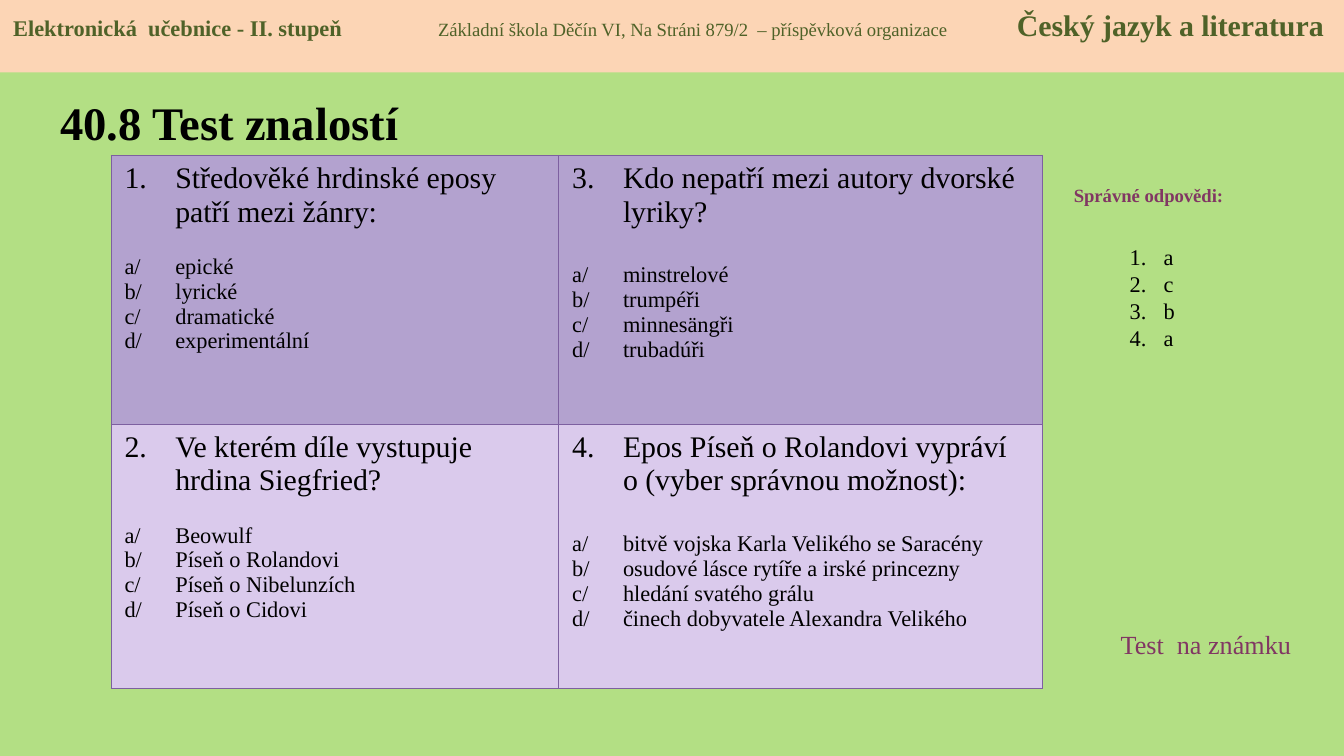
from lxml.etree import SubElement
from pptx import Presentation
from pptx.dml.color import RGBColor
from pptx.enum.shapes import MSO_SHAPE as SHAPE
from pptx.enum.text import MSO_ANCHOR as ANCHOR, PP_ALIGN as ALIGN
from pptx.oxml.ns import qn
from pptx.util import Cm, Pt

FONT = "Times New Roman"
BLACK, PLUM, OLIVE = "000000", "813763", "4F6228"
BACKGROUND, BANNER, BORDER = "B3DF84", "FCD5B5", "7D60A0"
ROW_FILLS = ["B3A2CF", "DACAEC"]

HEADER = [
    ("Elektronická  učebnice - II. stupeň", 12, True),
    ("\tZákladní škola Děčín VI, Na Stráni 879/2  – příspěvková organizace", 10, False),
    ("\tČeský jazyk a literatura", 16, True),
]
HEADER_TABS = [8.03, 18.97]

# Questions by table row: number, question, gap before options, options
QUESTIONS = [
    [(1, "Středověké hrdinské eposy patří mezi žánry:", 13.8,
      ["epické", "lyrické", "dramatické", "experimentální"]),
     (3, "Kdo nepatří mezi autory dvorské lyriky?", 18.4,
      ["minstrelové", "trumpéři", "minnesängři", "trubadúři"])],
    [(2, "Ve kterém díle vystupuje hrdina Siegfried?", 13.8,
      ["Beowulf", "Píseň o Rolandovi", "Píseň o Nibelunzích", "Píseň o Cidovi"]),
     (4, "Epos Píseň o Rolandovi vypráví o (vyber správnou možnost):", 18.4,
      ["bitvě vojska Karla Velikého se Saracény",
       "osudové lásce rytíře a irské princezny",
       "hledání svatého grálu",
       "činech dobyvatele Alexandra Velikého"])],
]
COL_WIDTHS, ROW_HEIGHTS = [8.46, 9.14], [5.08, 5.0]
ANSWERS = ["a", "c", "b", "a"]


def rgb(color):
    return RGBColor.from_string(color)


def add_run(p, text, size=12, color=BLACK, bold=False):
    r = p.add_run()
    r.text = text
    r.font.name, r.font.size, r.font.bold = FONT, Pt(size), bold
    r.font.color.rgb = rgb(color)


def add_text(tf, text, first=False, hang=0, number=None, align=ALIGN.LEFT,
             before=0, line=None, **fmt):
    p = tf.paragraphs[0] if first else tf.add_paragraph()
    p.alignment = align
    if before:
        p.space_before = Pt(before)
    if line:
        p.line_spacing = Pt(line)
    pPr = p._p.get_or_add_pPr()
    if hang:
        pPr.set("marL", str(Cm(hang)))
        pPr.set("indent", str(-Cm(hang)))
    if number:
        SubElement(pPr, qn("a:buFont"), typeface="+mj-lt")
        SubElement(pPr, qn("a:buAutoNum"), type="arabicPeriod", startAt=str(number))
    add_run(p, text, **fmt)


def add_box(slide, left, top, width, height):
    tf = slide.shapes.add_textbox(Cm(left), Cm(top), Cm(width), Cm(height)).text_frame
    tf.word_wrap = True
    return tf


def set_borders(cell):
    tcPr = cell._tc.get_or_add_tcPr()
    for i, side in enumerate(("lnL", "lnR", "lnT", "lnB")):
        ln = SubElement(tcPr, qn(f"a:{side}"), w=str(Pt(0.75)))
        SubElement(SubElement(ln, qn("a:solidFill")), qn("a:srgbClr"), val=BORDER)


prs = Presentation()
prs.slide_width, prs.slide_height = Cm(25.4), Cm(14.29)
s = prs.slides.add_slide(prs.slide_layouts[6])
s.background.fill.solid()
s.background.fill.fore_color.rgb = rgb(BACKGROUND)

# Title and caption of the answers
tf = add_box(s, 0.89, 1.47, 8.1, 1.65)
tf.vertical_anchor = ANCHOR.MIDDLE
add_text(tf, "40.8 Test znalostí", first=True, size=25, bold=True)
add_text(add_box(s, 19.71, 3.35, 3.99, 0.69), "Správné odpovědi:", first=True,
         align=ALIGN.CENTER, size=10, color=PLUM, bold=True)

# Question table
table = s.shapes.add_table(2, 2, Cm(2.1), Cm(2.94), Cm(sum(COL_WIDTHS)),
                           Cm(sum(ROW_HEIGHTS))).table
for col, width in zip(table.columns, COL_WIDTHS):
    col.width = Cm(width)
for row, height, fill, questions in zip(table.rows, ROW_HEIGHTS, ROW_FILLS, QUESTIONS):
    row.height = Cm(height)
    for cell, (number, question, gap, options) in zip(row.cells, questions):
        set_borders(cell)
        cell.fill.solid()
        cell.fill.fore_color.rgb = rgb(fill)
        tf = cell.text_frame
        add_text(tf, question, first=True, hang=0.96, number=number, size=16)
        for i, (letter, option) in enumerate(zip("abcd", options)):
            add_text(tf, f"{letter}/\t{option}", hang=0.96, before=0 if i else gap)

# Answers and note
tf = add_box(s, 21.1, 4.47, 1.4, 2.8)
for i, answer in enumerate(ANSWERS):
    add_text(tf, answer, first=i == 0, hang=0.64, number=1, line=14.5)
add_text(add_box(s, 20.93, 11.76, 3.99, 0.86), "Test  na známku", first=True,
         size=14, color=PLUM)

# Header banner
sp = s.shapes.add_shape(SHAPE.RECTANGLE, 0, 0, prs.slide_width, Cm(1.37))
sp.shadow.inherit = False
sp.fill.solid()
sp.fill.fore_color.rgb = rgb(BANNER)
sp.line.fill.background()
tf = sp.text_frame
tf.vertical_anchor = ANCHOR.TOP
p = tf.paragraphs[0]
p.alignment = ALIGN.LEFT
tabs = SubElement(p._p.get_or_add_pPr(), qn("a:tabLst"))
for pos in HEADER_TABS:
    SubElement(tabs, qn("a:tab"), pos=str(Cm(pos)), algn="l")
for text, size, bold in HEADER:
    add_run(p, text, size=size, color=OLIVE, bold=bold)

prs.save("out.pptx")
